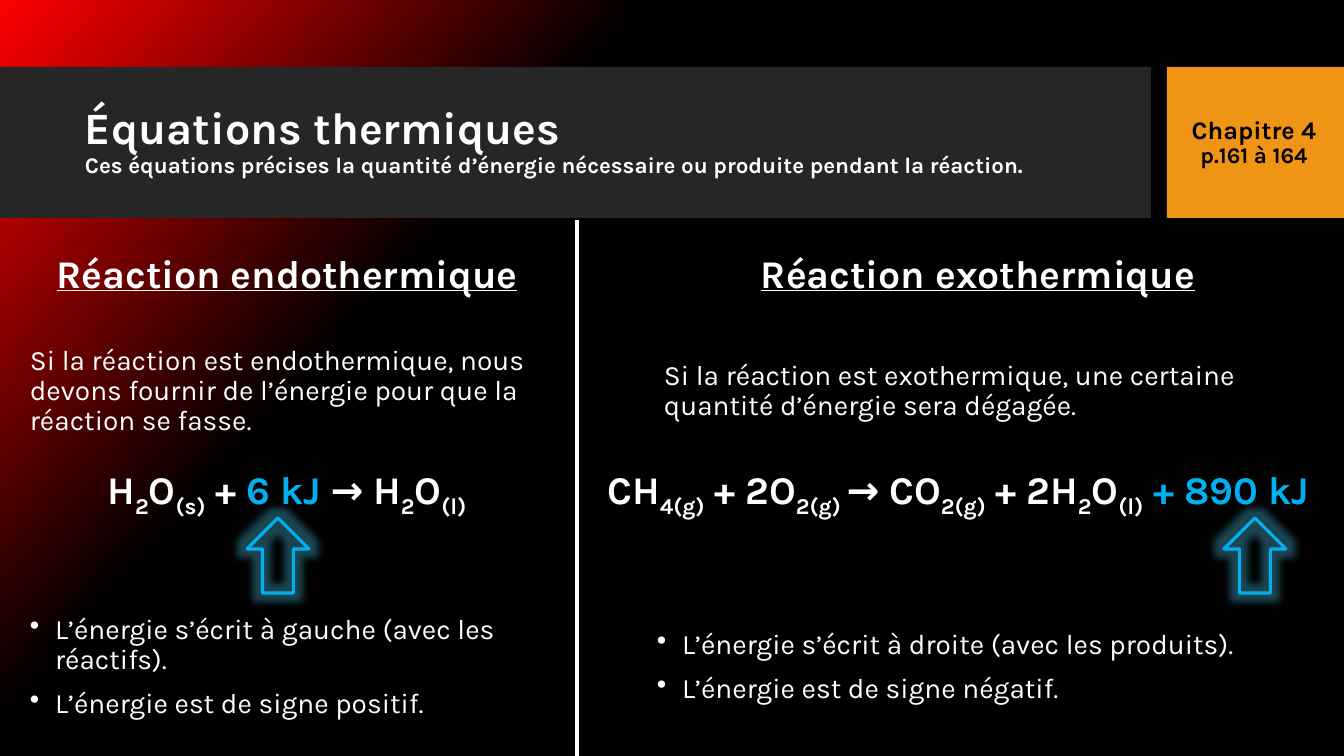
from copy import deepcopy
from pptx import Presentation, util as u
from pptx.dml.color import RGBColor
from pptx.enum import shapes, text
from pptx.oxml import parse_xml
from pptx.oxml.ns import nsdecls

THEME = dict(
    font="Karla", white="FFFFFF", black="000000", red="FF0000", heat="00B0F0",
    glow="46B2D0", band="262626", tab="F09415",
    title=32, head=28, body=20, sub=16, chap=18, rule=2.25, lead=0.9, gap=10,
)

TITLE = ["Équations thermiques",
         "Ces équations précises la quantité d’énergie nécessaire ou produite pendant la réaction."]
CHAPTER = ["Chapitre 4", "p.161 à 164"]

# Equation runs: (text, kind), where kind is "", "sub" or "heat"
SIDES = [
    dict(
        head="Réaction endothermique",
        body="Si la réaction est endothermique, nous devons fournir de l’énergie pour que la réaction se fasse.",
        eq=[("H", ""), ("2", "sub"), ("O", ""), ("(s)", "sub"), (" + ", ""), ("6 kJ ", "heat"),
            ("→ H", ""), ("2", "sub"), ("O", ""), ("(l)", "sub")],
        notes=["L’énergie s’écrit à gauche (avec les réactifs).", "L’énergie est de signe positif."],
        left=20, width=534, shift=0, span=(20, 534), arrow=247,
    ),
    dict(
        head="Réaction exothermique",
        body="Si la réaction est exothermique, une certaine quantité d’énergie sera dégagée.",
        eq=[("CH", ""), ("4(g)", "sub"), (" + 2O", ""), ("2(g) ", "sub"), ("→ CO", ""), ("2(g)", "sub"),
            (" + 2H", ""), ("2", "sub"), ("O", ""), ("(l)", "sub"), (" + 890 kJ ", "heat")],
        notes=["L’énergie s’écrit à droite (avec les produits).", "L’énergie est de signe négatif."],
        left=647, width=662, shift=7, span=(582, 762), arrow=1224,
    ),
]

WIDE, HIGH = 1344, 756
TOP, BAND = 67, 151
SPLIT = 577


def px(n):
    return u.Emu(round(n * 914400 / 100.8))


def tint(name):
    return RGBColor.from_string(THEME[name])


def assign(item, fmt):
    for key, value in fmt.items():
        setattr(item, key, value)


def write(box, paras, align="LEFT", bullet=False, gap=0):
    """Add a text box; each paragraph is a list of (text, size, colour, format, base)."""
    frame = slide.shapes.add_textbox(*map(px, box)).text_frame
    assign(frame, dict(word_wrap=True, vertical_anchor=text.MSO_ANCHOR.MIDDLE))
    for i, runs in enumerate(paras):
        para = frame.add_paragraph() if i else frame.paragraphs[0]
        assign(para, dict(alignment=text.PP_ALIGN[align], line_spacing=THEME["lead"],
                          space_before=u.Pt(gap if i else 0)))
        if bullet:
            props = para._p.get_or_add_pPr()
            props.set("marL", str(u.Inches(0.25)))
            props.set("indent", str(-u.Inches(0.25)))
            props.append(parse_xml(f'<a:buChar {nsdecls("a")} char="•"/>'))
        for words, size, color, fmt, base in runs:
            run = para.add_run()
            run.text = words
            assign(run.font, dict(name=THEME["font"], size=u.Pt(THEME[size]), **fmt))
            run.font.color.rgb = tint(color)
            if base:
                run.font._element.set("baseline", str(base))


def line(words, size, color="white", **fmt):
    return [(words, size, color, fmt, 0)]


def block(left, width, color):
    rect = slide.shapes.add_shape(shapes.MSO_SHAPE.RECTANGLE, *map(px, (left, TOP, width, BAND)))
    rect.shadow.inherit = False
    rect.fill.solid()
    rect.fill.fore_color.rgb = tint(color)
    rect.line.fill.background()


def arrow(left):
    """Outline an upward arrow with a soft glow."""
    mark = slide.shapes.add_shape(shapes.MSO_SHAPE.UP_ARROW, *map(px, (left, 518, 62, 75)))
    mark.shadow.inherit = False
    mark.fill.background()
    mark.line.color.rgb = tint("heat")
    mark.line.width = u.Pt(THEME["rule"])
    mark._element.spPr.xpath("a:effectLst")[0].append(parse_xml(
        f'<a:glow {nsdecls("a")} rad="139700"><a:srgbClr val="{THEME["glow"]}">'
        '<a:alpha val="40000"/></a:srgbClr></a:glow>'))


def backdrop():
    fill = slide.background.fill
    fill.gradient()
    fill.gradient_angle = 360 - 42
    stops = slide._element.xpath(".//a:gsLst")[0]
    stops.append(deepcopy(stops[-1]))
    for stop, (place, color) in zip(fill.gradient_stops, [(0, "red"), (0.32, "black"), (1, "black")]):
        stop.position = place
        stop.color.rgb = tint(color)


deck = Presentation()
deck.slide_width, deck.slide_height = px(WIDE), px(HIGH)
slide = deck.slides.add_slide(deck.slide_layouts[6])
backdrop()

block(0, 1151, "band")
block(1167, WIDE - 1167, "tab")
write((75, 83, 1059, 119), [line(t, s, bold=True) for t, s in zip(TITLE, ("title", "sub"))])
write((1165, TOP, 178, BAND + 1),
      [line(t, s, "black", bold=True) for t, s in zip(CHAPTER, ("chap", "sub"))], "CENTER")

rule = slide.shapes.add_connector(shapes.MSO_CONNECTOR.STRAIGHT, *map(px, (SPLIT, TOP + BAND + 2, SPLIT, HIGH)))
rule.line.color.rgb = tint("white")
rule.line.width = u.Pt(THEME["rule"])
rule._element.spPr.append(parse_xml(f'<a:effectLst {nsdecls("a")}/>'))

for side in SIDES:
    left, width = side["left"], side["width"]
    write((left, 237, width, 77), [line(side["head"], "head", bold=True, underline=True)], "CENTER")
    write((left + side["shift"], 319, width, 145), [line(side["body"], "body")])
    start, reach = side["span"]
    terms = [(t, "head", "heat" if kind == "heat" else "white", dict(bold=True),
              -25000 if kind == "sub" else 0) for t, kind in side["eq"]]
    write((start, 463, reach, 55), [terms], "CENTER")
    arrow(side["arrow"])
    write((left, 600, width, 135), [line(t, "body") for t in side["notes"]],
          bullet=True, gap=THEME["gap"])

deck.save("out.pptx")
